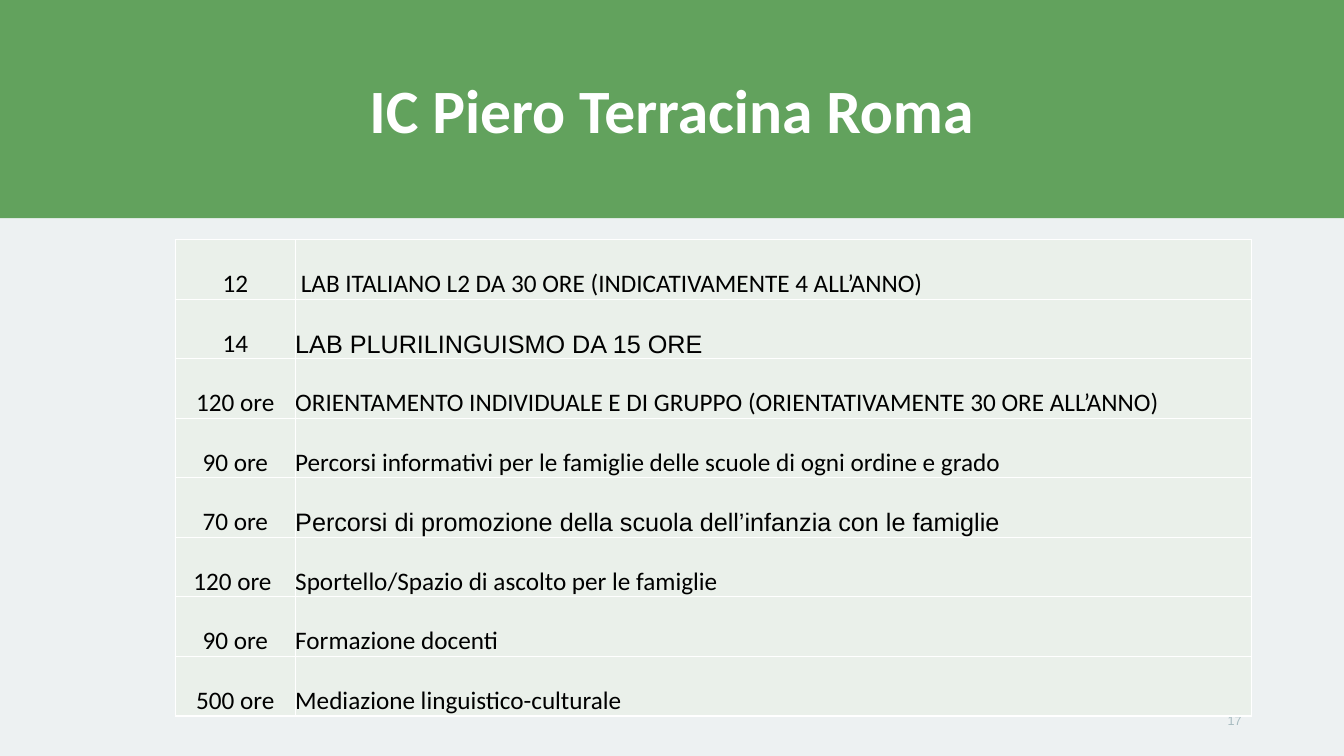
from lxml.etree import SubElement
from pptx import Presentation
from pptx.dml.color import RGBColor
from pptx.enum.shapes import MSO_SHAPE as Shape
from pptx.enum.text import MSO_ANCHOR as Anchor, PP_ALIGN as Align
from pptx.oxml.ns import qn
from pptx.util import Cm, Pt

COLORS = {
    "background": "EDF1F2",
    "band": "62A25D",
    "white": "FFFFFF",
    "cell": "EAF0EA",
    "text": "000000",
    "number": "A7BBC0",
}

ACTIVITIES = [
    ("12", " LAB ITALIANO L2 DA 30 ORE (INDICATIVAMENTE 4 ALL’ANNO)", "Calibri"),
    ("14", "LAB PLURILINGUISMO DA 15 ORE", "Arial"),
    ("120 ore", "ORIENTAMENTO INDIVIDUALE E DI GRUPPO (ORIENTATIVAMENTE 30 ORE ALL’ANNO)", "Calibri"),
    ("90 ore", "Percorsi informativi per le famiglie delle scuole di ogni ordine e grado", "Calibri"),
    ("70 ore", "Percorsi di promozione della scuola dell’infanzia con le famiglie", "Arial"),
    ("120 ore ", "Sportello/Spazio di ascolto per le famiglie", "Calibri"),
    ("90 ore", "Formazione docenti", "Calibri"),
    ("500 ore", "Mediazione linguistico-culturale", "Calibri"),
]


def rgb(name):
    return RGBColor.from_string(COLORS[name])


class SlideBuilder:
    def __init__(self, slide):
        self.slide = slide
        background = slide.background.fill
        background.solid()
        background.fore_color.rgb = rgb("background")

    def set_text(self, frame, text, size, color, align, font="Calibri", bold=False):
        frame.text = text
        paragraph = frame.paragraphs[0]
        paragraph.alignment = align
        for run in paragraph.runs:
            run.font.name = font
            run.font.size = Pt(size)
            run.font.bold = bold
            run.font.color.rgb = rgb(color)
        return paragraph

    def band(self, left, top, width, height):
        band = self.slide.shapes.add_shape(
            Shape.RECTANGLE, Cm(left), Cm(top), Cm(width), Cm(height))
        band.shadow.inherit = False
        band.fill.solid()
        band.fill.fore_color.rgb = rgb("band")
        band.line.fill.background()

    def label(self, left, top, width, height, text, size, color, align, **style):
        frame = self.slide.shapes.add_textbox(
            Cm(left), Cm(top), Cm(width), Cm(height)).text_frame
        frame.word_wrap = True
        frame.vertical_anchor = Anchor.MIDDLE
        return self.set_text(frame, text, size, color, align, **style)

    def cell(self, cell, text, align, font):
        cell.margin_left = cell.margin_right = cell.margin_top = cell.margin_bottom = 0
        cell.vertical_anchor = Anchor.BOTTOM
        self.set_text(cell.text_frame, text, 18, "text", align, font)
        properties = cell._tc.get_or_add_tcPr()
        for side in ("a:lnL", "a:lnR", "a:lnT", "a:lnB"):
            border = SubElement(properties, qn(side), w=str(Pt(1)))
            fill = SubElement(border, qn("a:solidFill"))
            SubElement(fill, qn("a:srgbClr"), val=COLORS["white"])
        cell.fill.solid()
        cell.fill.fore_color.rgb = rgb("cell")

    def table(self, left, top, widths, row_height, rows):
        table = self.slide.shapes.add_table(
            len(rows), len(widths), Cm(left), Cm(top),
            Cm(sum(widths)), Cm(row_height * len(rows))).table
        table.first_row = table.horz_banding = False
        for column, width in zip(table.columns, widths):
            column.width = Cm(width)
        for index, (amount, activity, font) in enumerate(rows):
            table.rows[index].height = Cm(row_height)
            self.cell(table.cell(index, 0), amount, Align.CENTER, "Calibri")
            self.cell(table.cell(index, 1), activity, Align.LEFT, font)


def main():
    deck = Presentation()
    deck.slide_width, deck.slide_height = Cm(33.87), Cm(19.05)
    builder = SlideBuilder(deck.slides.add_slide(deck.slide_layouts[6]))
    builder.band(0, 0, 33.87, 5.5)
    title = builder.label(2.33, 1.01, 29.21, 3.68, "IC Piero Terracina Roma",
                          44, "white", Align.CENTER, bold=True)
    title.line_spacing = 0.9
    builder.label(23.92, 17.66, 7.62, 1.01, "17", 9, "number", Align.RIGHT, font="Arial")
    builder.table(4.42, 6.04, (3.02, 24.1), 1.5, ACTIVITIES)
    deck.save("out.pptx")


if __name__ == "__main__":
    main()
